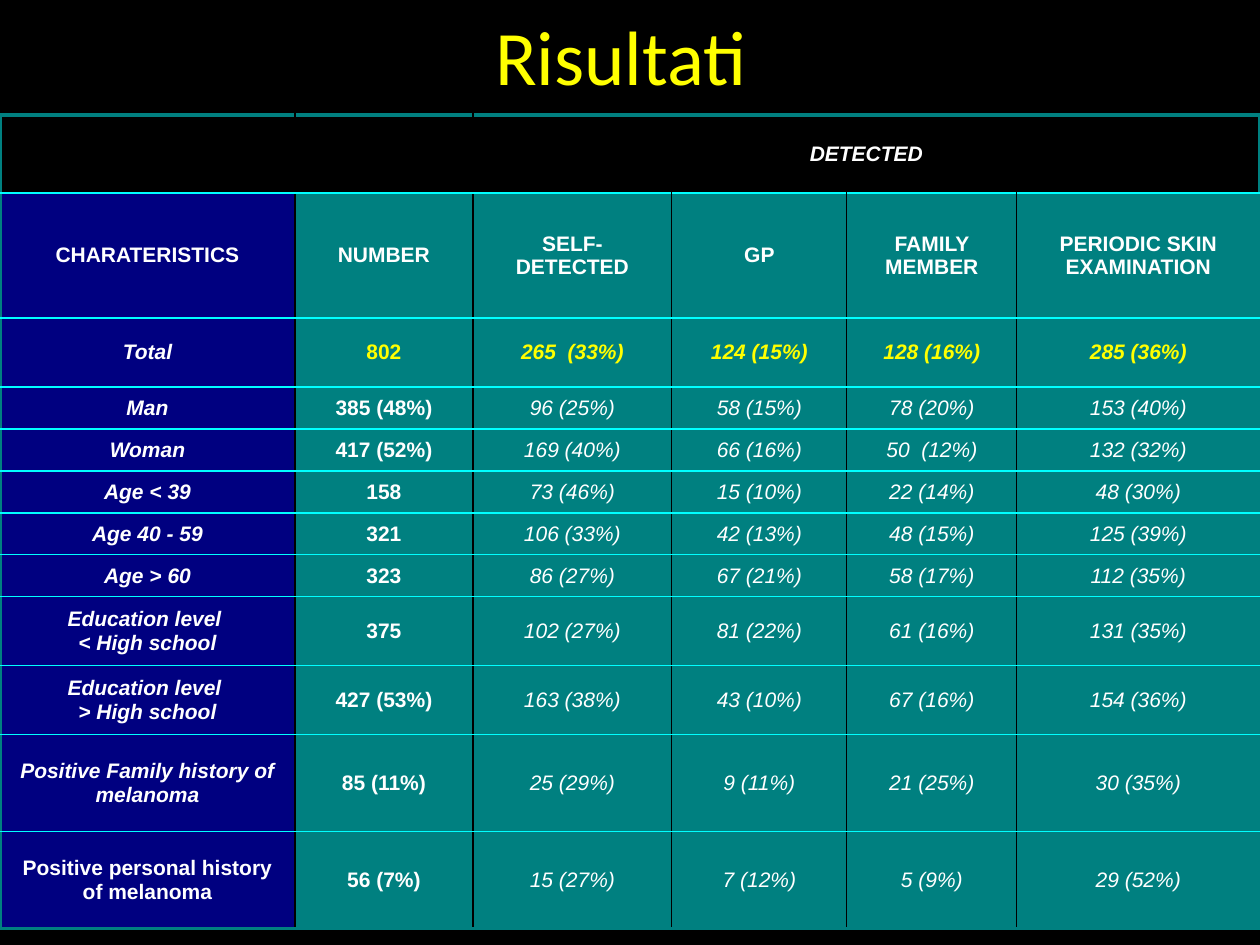
from lxml.etree import SubElement
from pptx import Presentation
from pptx.dml.color import RGBColor
from pptx.enum.text import MSO_ANCHOR as Anchor, PP_ALIGN as Align
from pptx.oxml.ns import qn
from pptx.util import Pt

BLACK = RGBColor(0x00, 0x00, 0x00)
WHITE = RGBColor(0xFF, 0xFF, 0xFF)
YELLOW = RGBColor(0xFF, 0xFF, 0x00)
TEAL = RGBColor(0x00, 0x80, 0x80)
NAVY = RGBColor(0x00, 0x00, 0x80)
CYAN = RGBColor(0x00, 0xFF, 0xFF)

TITLE = "Risultati"
ROWS = [
    ("", "", "DETECTED", "", "", ""),
    ("CHARATERISTICS", "NUMBER", "SELF-DETECTED", "GP", "FAMILY MEMBER",
     "PERIODIC SKIN EXAMINATION"),
    ("Total", "802", "265  (33%)", "124 (15%)", "128 (16%)", "285 (36%)"),
    ("Man", "385 (48%)", "96 (25%)", "58 (15%)", "78 (20%)", "153 (40%)"),
    ("Woman", "417 (52%)", "169 (40%)", "66 (16%)", "50  (12%)", "132 (32%)"),
    ("Age < 39", "158", "73 (46%)", "15 (10%)", "22 (14%)", "48 (30%)"),
    ("Age 40 - 59", "321", "106 (33%)", "42 (13%)", "48 (15%)", "125 (39%)"),
    ("Age > 60", "323", "86 (27%)", "67 (21%)", "58 (17%)", "112 (35%)"),
    ("Education level \n< High school", "375", "102 (27%)", "81 (22%)",
     "61 (16%)", "131 (35%)"),
    ("Education level \n> High school", "427 (53%)", "163 (38%)", "43 (10%)",
     "67 (16%)", "154 (36%)"),
    ("Positive Family history of melanoma", "85 (11%)", "25 (29%)", "9 (11%)",
     "21 (25%)", "30 (35%)"),
    ("Positive personal history of melanoma", "56 (7%)", "15 (27%)", "7 (12%)",
     "5 (9%)", "29 (52%)"),
]
COLUMN_WIDTHS = [295, 178, 199, 175, 170, 243]
ROW_HEIGHTS = [78, 125, 69] + [42] * 5 + [69, 69, 97, 97]
TABLE_TOP = 115
GROUP_ROW, HEADER_ROW, TOTAL_ROW = 0, 1, 2
LABEL_COL, NUMBER_COL, DETECTED_COL = 0, 1, 2
LAST_ROW, LAST_COL = len(ROWS) - 1, len(COLUMN_WIDTHS) - 1

# Border lines: colour and width in points
FRAME, ROW_LINE, COLUMN_LINE = (TEAL, 2), (CYAN, 1), (BLACK, 0.75)


def px(count):
    return round(count * 914400 / 126)


def add_text(paragraph, text, font_name, size, color, bold=False, italic=False):
    paragraph.alignment = Align.CENTER
    run = paragraph.add_run()
    run.text = text
    font = run.font
    font.name, font.size, font.bold, font.italic = font_name, Pt(size), bold, italic
    font.color.rgb = color


def cell_style(row, col):
    """Return fill, text colour, bold and italic for a place in the table."""
    fill = BLACK if row == GROUP_ROW else NAVY if col == LABEL_COL else TEAL
    color = YELLOW if row == TOTAL_ROW and col > LABEL_COL else WHITE
    bold = row <= TOTAL_ROW or col <= NUMBER_COL
    upright_label = col == LABEL_COL and row == LAST_ROW
    italic = row != HEADER_ROW and col != NUMBER_COL and not upright_label
    return fill, color, bold, italic


def set_borders(cell, row, col):
    sides = {
        "a:lnL": FRAME if col == 0 else COLUMN_LINE,
        "a:lnR": FRAME if col + cell.span_width > LAST_COL else COLUMN_LINE,
        "a:lnT": FRAME if row == 0 else ROW_LINE,
        "a:lnB": FRAME if row == LAST_ROW else ROW_LINE,
    }
    properties = cell._tc.get_or_add_tcPr()
    for index, (tag, (color, width)) in enumerate(sides.items()):
        line = SubElement(properties, qn(tag), w=str(Pt(width)))
        solid = SubElement(line, qn("a:solidFill"))
        SubElement(solid, qn("a:srgbClr"), val=str(color))
        properties.insert(index, line)


def main():
    deck = Presentation()
    deck.slide_width, deck.slide_height = px(1260), px(945)
    slide = deck.slides.add_slide(deck.slide_layouts[5])
    slide.background.fill.solid()
    slide.background.fill.fore_color.rgb = BLACK

    # Title
    title = slide.shapes.title
    title.left, title.top, title.width, title.height = map(px, (54, -24, 1134, 158))
    title.text_frame.vertical_anchor = Anchor.MIDDLE
    add_text(title.text_frame.paragraphs[0], TITLE, "Calibri", 44, YELLOW)

    # Results table
    results = slide.shapes.add_table(
        len(ROWS), len(COLUMN_WIDTHS), 0, px(TABLE_TOP),
        px(sum(COLUMN_WIDTHS)), px(sum(ROW_HEIGHTS))).table
    results.first_row = results.horz_banding = False
    for column, width in zip(results.columns, COLUMN_WIDTHS):
        column.width = px(width)
    for line, height in zip(results.rows, ROW_HEIGHTS):
        line.height = px(height)
    results.cell(GROUP_ROW, DETECTED_COL).merge(results.cell(GROUP_ROW, LAST_COL))

    # Cells
    for row, texts in enumerate(ROWS):
        for col, text in enumerate(texts):
            cell = results.cell(row, col)
            fill, color, bold, italic = cell_style(row, col)
            cell.fill.solid()
            cell.fill.fore_color.rgb = fill
            cell.vertical_anchor = Anchor.MIDDLE
            set_borders(cell, row, col)
            if not text:
                continue
            frame = cell.text_frame
            for number, part in enumerate(text.split("\n")):
                paragraph = frame.add_paragraph() if number else frame.paragraphs[0]
                add_text(paragraph, part, "Arial", 12, color, bold, italic)

    deck.save("out.pptx")


if __name__ == "__main__":
    main()
